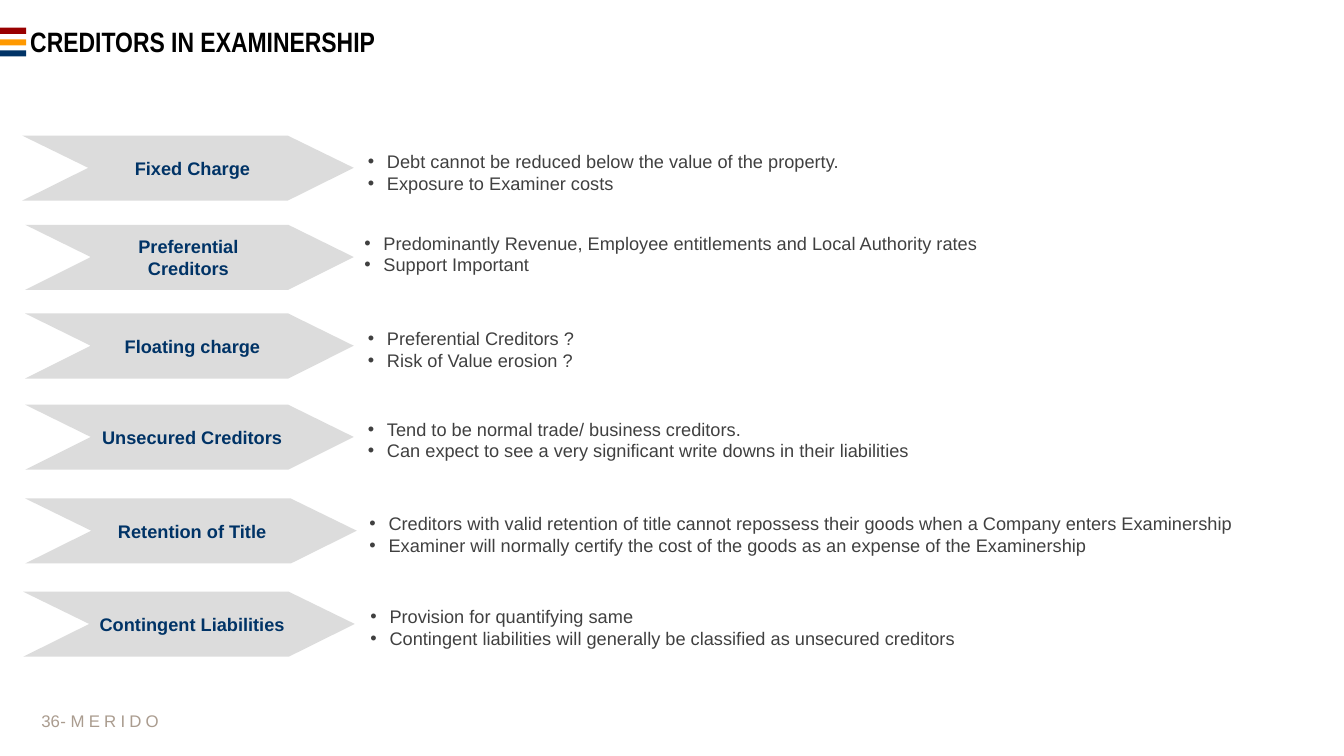
"""Build the slide on creditors in examinership."""
from typing import NamedTuple

from lxml import etree
from pptx import Presentation
from pptx.dml.color import RGBColor
from pptx.enum.shapes import MSO_SHAPE
from pptx.enum.text import MSO_ANCHOR, MSO_AUTO_SIZE, PP_ALIGN
from pptx.oxml.ns import qn
from pptx.util import Pt

RECT = MSO_SHAPE.RECTANGLE
TOP, MID = MSO_ANCHOR.TOP, MSO_ANCHOR.MIDDLE
LEFT, MIDST, RIGHT = PP_ALIGN.LEFT, PP_ALIGN.CENTER, PP_ALIGN.RIGHT
FIXED = MSO_AUTO_SIZE.NONE
PX = 9144
HUES = {
    "red": "990000", "gold": "FF9900", "navy": "003366", "black": "000000",
    "grey": "404040", "pale": "D9D9D9", "taupe": "AA9C8F",
}


class Box(NamedTuple):
    x: int
    y: int
    w: int
    h: int


class Font(NamedTuple):
    size: int
    hue: str
    bold: bool = False
    face: str = "Arial"


class Row(NamedTuple):
    name: str
    arrow: Box
    label_x: int
    label_w: int
    note: Box
    lines: tuple[str, ...]


HEAD = Font(40, "black", True, "Arial Narrow")
LABEL = Font(26, "navy", True)
NOTE = Font(26, "grey")
FOOT = Font(24, "taupe")

BARS = (("red", 55), ("gold", 78), ("navy", 100))
ROWS = (
    Row("Fixed Charge", Box(44, 269, 658, 129), 227, 310, Box(730, 298, 1694, 88),
        ("Debt cannot be reduced below the value of the property.",
         "Exposure to Examiner costs")),
    Row("Preferential Creditors", Box(50, 446, 652, 129), 190, 368, Box(723, 460, 1694, 88),
        ("Predominantly Revenue, Employee entitlements and Local Authority rates",
         "Support Important")),
    Row("Floating charge", Box(50, 622, 652, 129), 246, 272, Box(730, 649, 1694, 88),
        ("Preferential Creditors ?", "Risk of Value erosion ?")),
    Row("Unsecured Creditors", Box(50, 803, 652, 129), 201, 361, Box(730, 829, 1694, 88),
        ("Tend to be normal trade/ business creditors.",
         "Can expect to see a very significant write downs in their liabilities")),
    Row("Retention of Title", Box(50, 989, 658, 129), 233, 297, Box(733, 1016, 1789, 88),
        ("Creditors with valid retention of title cannot repossess their goods "
         "when a Company enters Examinership",
         "Examiner will normally certify the cost of the goods as an expense "
         "of the Examinership")),
    Row("Contingent Liabilities", Box(46, 1174, 658, 129), 196, 371, Box(735, 1201, 1687, 88),
        ("Provision for quantifying same",
         "Contingent liabilities will generally be classified as unsecured creditors")),
)


def tint(hue: str) -> RGBColor:
    return RGBColor.from_string(HUES[hue])


def emu(box: Box) -> list[int]:
    return [n * PX for n in box]


def add_run(para, text: str, font: Font):
    run = para.add_run()
    run.text = text
    run.font.name = font.face
    run.font.size = Pt(font.size)
    run.font.bold = font.bold
    run.font.color.rgb = tint(font.hue)
    return run


def paint(shape, hue: str) -> None:
    shape.shadow.inherit = False
    shape.fill.solid()
    shape.fill.fore_color.rgb = tint(hue)
    shape.line.fill.background()


def add_box(slide, box: Box, pad: tuple[int, int] = (0, 0), anchor=TOP, wrap: bool = True):
    frame = slide.shapes.add_textbox(*emu(box)).text_frame
    frame.margin_left = frame.margin_right = pad[0] * PX
    frame.margin_top = frame.margin_bottom = pad[1] * PX
    frame.vertical_anchor = anchor
    frame.word_wrap = wrap
    return frame


def add_bar(slide, hue: str, y: int) -> None:
    paint(slide.shapes.add_shape(RECT, *emu(Box(0, y, 52, 12))), hue)


def add_arrow(slide, box: Box) -> None:
    x, y, w, h = box
    tip, mid, dent = x + w, y + h // 2, w // 5
    pen = slide.shapes.build_freeform(x, y, scale=PX)
    pen.add_line_segments([
        (tip - dent, y), (tip, mid), (tip - dent, y + h), (x, y + h), (x + dent, mid),
    ])
    shape = pen.convert_to_shape()
    paint(shape, "pale")
    color = shape.fill._xPr.find(qn("a:solidFill"))[0]
    etree.SubElement(color, qn("a:alpha"), val="90000")


def add_note(slide, box: Box, lines: tuple[str, ...]) -> None:
    frame = add_box(slide, box)
    for i, line in enumerate(lines):
        para = frame.add_paragraph() if i else frame.paragraphs[0]
        props = para._p.get_or_add_pPr()
        props.set("marL", str(38 * PX))
        props.set("indent", str(-38 * PX))
        etree.SubElement(props, qn("a:buFont"), typeface="Arial")
        etree.SubElement(props, qn("a:buChar"), char="•")
        add_run(para, line, NOTE)


def add_row(slide, row: Row) -> None:
    add_arrow(slide, row.arrow)
    spot = Box(row.label_x, row.arrow.y + 43, row.label_w, 44)
    para = add_box(slide, spot, anchor=MID, wrap=False).paragraphs[0]
    para.alignment = MIDST
    add_run(para, row.name, LABEL)
    add_note(slide, row.note, row.lines)


def set_title(slide, text: str) -> None:
    title = slide.shapes.title
    title.left, title.top, title.width, title.height = emu(Box(50, 46, 2567, 79))
    frame = title.text_frame
    frame.auto_size = FIXED
    frame.vertical_anchor = MID
    para = frame.paragraphs[0]
    para.alignment = LEFT
    para.line_spacing = 0.9
    add_run(para, text, HEAD)


def add_foot(slide) -> None:
    page = add_box(slide, Box(44, 1390, 75, 80), (0, 5), MID).paragraphs[0]
    page.alignment = RIGHT
    add_run(page, "36", FOOT)
    firm = add_box(slide, Box(110, 1390, 229, 80), (10, 5), MID, False).paragraphs[0]
    add_run(firm, "- ", FOOT)
    name = add_run(firm, "MERIDO", FOOT)
    name.font._element.set("spc", "600")


def main() -> None:
    deck = Presentation()
    deck.slide_width, deck.slide_height = 2667 * PX, 1500 * PX
    slide = deck.slides.add_slide(deck.slide_layouts[5])
    for hue, y in BARS:
        add_bar(slide, hue, y)
    set_title(slide, "CREDITORS IN EXAMINERSHIP")
    for row in ROWS:
        add_row(slide, row)
    add_foot(slide)
    deck.save("out.pptx")


if __name__ == "__main__":
    main()
